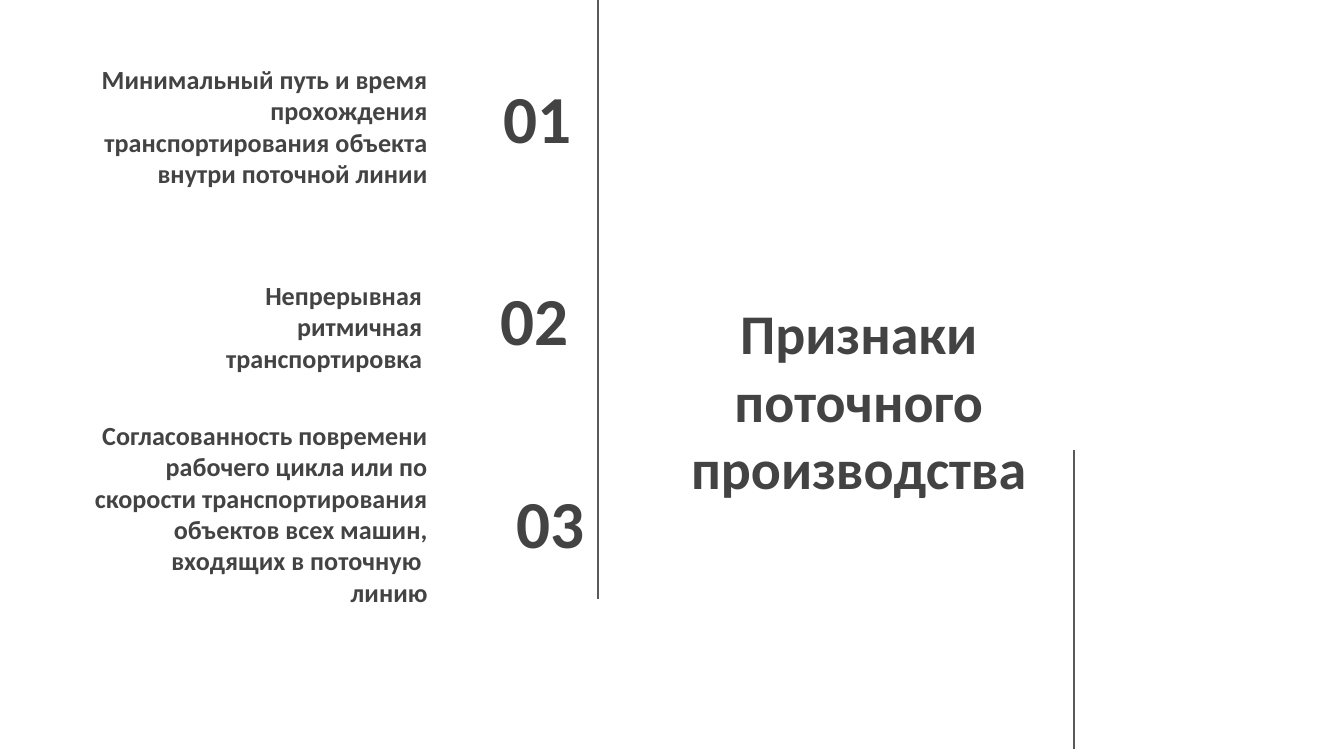
from lxml.etree import SubElement
from pptx import Presentation
from pptx.dml.color import RGBColor
from pptx.enum.shapes import MSO_CONNECTOR
from pptx.enum.text import MSO_ANCHOR, PP_ALIGN
from pptx.oxml.ns import qn
from pptx.util import Inches, Pt

COLORS = {"text": "434343", "line": "595959"}
FONT = "Calibri"

FEATURES = [
    ("01", (3.14, 0.55),
     "Минимальный путь и время прохождения транспортирования объекта внутри поточной линии",
     (0.59, 0.37, 2.69)),
    ("02", (3.12, 2.06),
     "Непрерывная ритмичная транспортировка",
     (1.41, 1.98, 1.83)),
    ("03", (3.24, 3.57),
     "Согласованность повремени рабочего цикла или по скорости транспортирования "
     "объектов всех машин, входящих в поточную  линию",
     (0.59, 3.02, 2.69)),
]


def add_text(s, text, x, y, w, h, size=14, align=PP_ALIGN.RIGHT, anchor=MSO_ANCHOR.TOP):
    tf = s.shapes.add_textbox(Inches(x), Inches(y), Inches(w), Inches(h)).text_frame
    tf.word_wrap = True
    tf.vertical_anchor = anchor
    tf.margin_left = tf.margin_right = tf.margin_top = tf.margin_bottom = Inches(0.1)
    p = tf.paragraphs[0]
    p.alignment = align
    r = p.add_run()
    r.text = text
    r.font.name = FONT
    r.font.size = Pt(size)
    r.font.bold = True
    r.font.color.rgb = RGBColor.from_string(COLORS["text"])


def add_vertical_line(s, x, top, bottom):
    line = s.shapes.add_connector(
        MSO_CONNECTOR.STRAIGHT, Inches(x), Inches(top), Inches(x), Inches(bottom))
    line.line.color.rgb = RGBColor.from_string(COLORS["line"])
    line.line.width = Pt(0.75)
    SubElement(line._element.spPr, qn("a:effectLst"))


def add_feature(s, number, number_at, text, text_at):
    add_text(s, text, *text_at, 0.63)
    add_text(s, number, *number_at, 1.21, 0.63, size=36, anchor=MSO_ANCHOR.MIDDLE)


def main():
    prs = Presentation()
    prs.slide_width = Inches(10)
    prs.slide_height = prs.slide_width * 9 // 16
    s = prs.slides.add_slide(prs.slide_layouts[6])

    add_text(s, "Признаки поточного производства", 4.98, 2.46, 2.82, 1.03,
             size=30, align=PP_ALIGN.CENTER, anchor=MSO_ANCHOR.MIDDLE)
    for feature in FEATURES:
        add_feature(s, *feature)
    add_vertical_line(s, 4.45, -0.03, 4.46)
    add_vertical_line(s, 7.99, 3.35, 5.57)

    prs.save("out.pptx")


if __name__ == "__main__":
    main()
